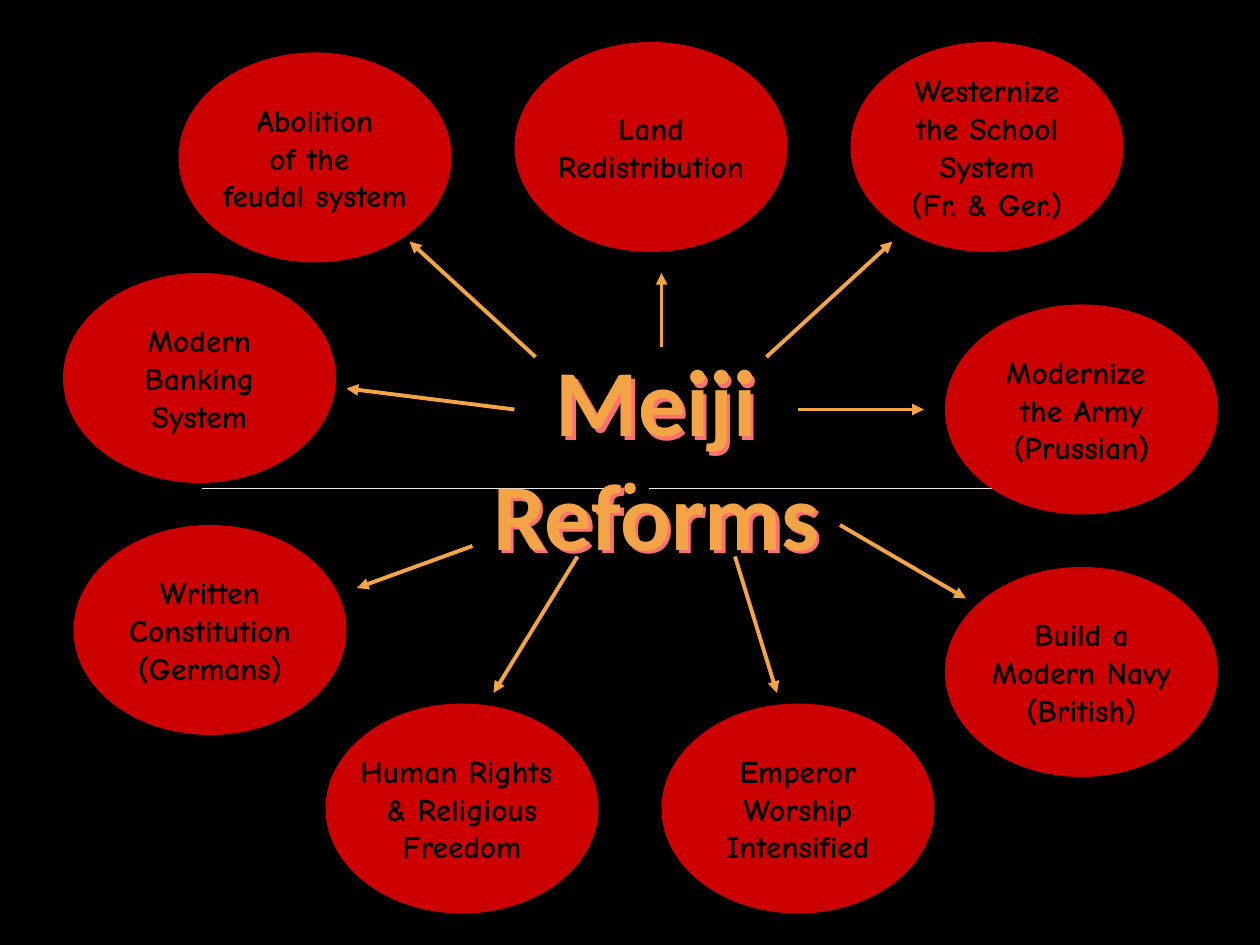
from dataclasses import dataclass

from lxml import etree
from pptx import Presentation
from pptx.dml.color import RGBColor
from pptx.enum.shapes import MSO_CONNECTOR, MSO_SHAPE
from pptx.enum.text import MSO_ANCHOR, MSO_AUTO_SIZE, PP_ALIGN
from pptx.oxml import parse_xml
from pptx.oxml.ns import nsdecls, qn
from pptx.util import Inches, Pt

OVAL = MSO_SHAPE.OVAL
LINE = MSO_CONNECTOR.STRAIGHT
MIDDLE, TOP = MSO_ANCHOR.MIDDLE, MSO_ANCHOR.TOP
CENTER = PP_ALIGN.CENTER
GROW = MSO_AUTO_SIZE.SHAPE_TO_FIT_TEXT
TITLE_ONLY = 5
COLS, ROWS = 120, 90
UNIT = Inches(10) / COLS


@dataclass(frozen=True)
class Theme:
    """Colours, fonts and sizes of the slide."""
    back: str = "000000"
    oval: str = "CC0000"
    gold: str = "F3A447"
    rule: str = "E9E9E8"
    glow: str = "FF7070"
    ink: str = "000000"
    head: str = "Calibri"
    body: str = "Comic Neue"
    big: int = 54
    small: int = 18


THEME = Theme()
TITLE_BOX = (43, 32, 39, 22.8)
RULE_BOX = (19.2, 46.5, 81.6, 0)
OVAL_SIZE = (26, 20)
REFORMS = [
    ((17, 5), "Abolition\vof the \vfeudal system", (51, 34), (39, 23)),
    ((49, 4), "Land\vRedistribution", (63, 33), (63, 26)),
    ((81, 4), "Westernize\vthe School\vSystem\v(Fr. & Ger.)", (73, 34), (85, 23)),
    ((90, 29), "Modernize \vthe Army\v(Prussian)", (76, 39), (88, 39)),
    ((90, 54), "Build a\vModern Navy\v(British)", (80, 50), (92, 57)),
    ((63, 67), "Emperor\vWorship\vIntensified", (70, 53), (74, 66)),
    ((31, 67), "Human Rights \v& Religious\vFreedom", (55, 53), (47, 66)),
    ((7, 50), "Written\vConstitution\v(Germans)", (45, 52), (34, 56)),
    ((6, 26), "Modern\vBanking\vSystem", (49, 39), (33, 37)),
]


def grid(*cells):
    """Turn grid cells into slide lengths."""
    return [round(cell * UNIT) for cell in cells]


def color(code):
    """Make a colour from its code."""
    return RGBColor.from_string(code)


def write(shape, text, font, size, ink, anchor):
    """Set centred bold text in a shape."""
    frame = shape.text_frame
    frame.text = text
    frame.vertical_anchor = anchor
    for para in frame.paragraphs:
        para.alignment = CENTER
        for run in para.runs:
            run.font.name = font
            run.font.size = Pt(size)
            run.font.bold = True
            run.font.color.rgb = color(ink)
    return frame


def add_line(slide, start, end, ink, width, arrow=False):
    """Draw a straight line, with an arrowhead if asked."""
    line = slide.shapes.add_connector(LINE, *grid(*start, *end))
    line.line.color.rgb = color(ink)
    line.line.width = Pt(width)
    if arrow:
        etree.SubElement(line.line._get_or_add_ln(), qn("a:tailEnd"), type="triangle")
    etree.SubElement(line.element.spPr, qn("a:effectLst"))


def add_oval(slide, box, fill):
    """Draw a plain oval in its box."""
    oval = slide.shapes.add_shape(OVAL, *grid(*box))
    oval.shadow.inherit = False
    oval.fill.solid()
    oval.fill.fore_color.rgb = color(fill)
    oval.line.fill.background()
    return oval


def add_rule(slide, box):
    """Draw a rule split by a dot at its middle."""
    left, top, width, _ = box
    mid, gap, dot = left + width / 2, 1.8, 0.6
    add_line(slide, (left, top), (mid - gap, top), THEME.rule, 0.75)
    add_line(slide, (mid + gap, top), (left + width, top), THEME.rule, 0.75)
    bead = add_oval(slide, (mid - dot / 2, top - dot / 2, dot, dot), THEME.gold)
    bead.line.color.rgb = color(THEME.gold)
    bead.line.width = Pt(3)


def add_title(slide, box):
    """Place the title above the rule, with a tinted shadow."""
    title = slide.shapes.title
    title.left, title.top, title.width, title.height = grid(*box)
    frame = write(title, "Meiji\vReforms", THEME.head, THEME.big, THEME.gold, TOP)
    frame.word_wrap = True
    frame.auto_size = GROW
    title.fill.background()
    title.element.spPr.append(parse_xml(
        f'<a:effectLst {nsdecls("a")}><a:outerShdw dist="35921" dir="2700000">'
        f'<a:srgbClr val="{THEME.glow}"/></a:outerShdw></a:effectLst>'))
    title.element.getparent().append(title.element)


def add_reform(slide, box, text):
    """Place one labelled reform oval."""
    oval = add_oval(slide, box, THEME.oval)
    frame = write(oval, text, THEME.body, THEME.small, THEME.ink, MIDDLE)
    frame.word_wrap = False


def main():
    """Build and save the slide."""
    deck = Presentation()
    deck.slide_width, deck.slide_height = grid(COLS, ROWS)
    slide = deck.slides.add_slide(deck.slide_layouts[TITLE_ONLY])
    slide.background.fill.solid()
    slide.background.fill.fore_color.rgb = color(THEME.back)
    add_rule(slide, RULE_BOX)
    add_title(slide, TITLE_BOX)
    for spot, text, start, end in REFORMS:
        add_reform(slide, (*spot, *OVAL_SIZE), text)
        add_line(slide, start, end, THEME.gold, 2.25, arrow=True)
    deck.save("out.pptx")


if __name__ == "__main__":
    main()
